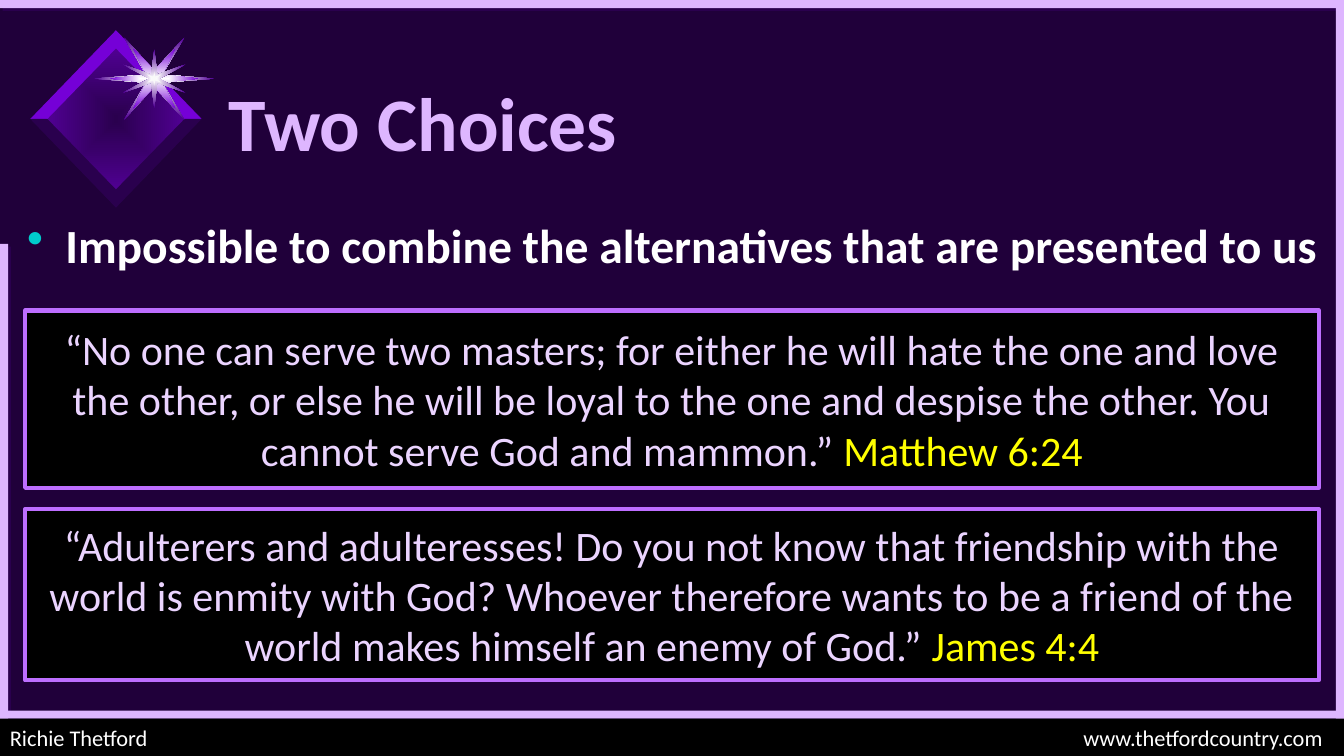
from pptx import Presentation
from pptx.dml.color import RGBColor
from pptx.enum.shapes import MSO_SHAPE
from pptx.enum.text import MSO_ANCHOR, PP_ALIGN
from pptx.oxml import parse_xml
from pptx.oxml.ns import nsdecls, qn
from pptx.util import Inches, Pt

RECT = MSO_SHAPE.RECTANGLE
MIDDLE = MSO_ANCHOR.MIDDLE
LEFT, CENTER = PP_ALIGN.LEFT, PP_ALIGN.CENTER

NIGHT, DARK, DEEP, VIVID = "20003A", "2A004E", "500093", "7500D7"
LILAC, PALE, EDGE = "DEB6FF", "EBD4FF", "BD6EFF"
WHITE, BLACK, YELLOW, TEAL = "FFFFFF", "000000", "FFFF00", "00CCCC"

VERSES = [
    (3.08, 1.76, "“No one can serve two masters; for either he will hate the one and love "
     "the other, or else he will be loyal to the one and despise the other. You "
     "cannot serve God and mammon.” ", "Matthew 6:24"),
    (5.05, 1.7, "“Adulterers and adulteresses! Do you not know that friendship with the "
     "world is enmity with God? Whoever therefore wants to be a friend of the "
     "world makes himself an enemy of God.” ", "James 4:4"),
]
STARS = [
    ([(60, 0), (8, -4), (30, -41), (0, -8)], (WHITE, DEEP)),
    ([(44, 0), (8, -4), (21, -30), (0, -8)], (WHITE, VIVID)),
    ([(5, 0), (31, -14), (3, -4), (0, -29)], (WHITE, DEEP)),
    ([(2, 0), (7, -4), (1, -2), (0, -7)], ("F9F9F9",)),
]
BARS = [(0, 2.42, 0.08, 5.08), (0, 0, 13.33, 0.08),
        (0.08, 7.05, 13.17, 0.08), (13.25, 0, 0.08, 7.5)]


def rgb(code):
    """Turn a hex string into a colour."""
    return RGBColor.from_string(code)


def style(para, size, color, bold=False, align=LEFT):
    """Set the font and alignment of a paragraph."""
    para.alignment = align
    font = para.font
    font.name, font.size, font.bold = "Calibri", Pt(size), bold
    font.color.rgb = rgb(color)


def paint(shape, colors):
    """Fill a shape with one colour, or from its centre outwards with two."""
    shape.shadow.inherit = False
    shape.line.fill.background()
    if len(colors) == 1:
        shape.fill.solid()
        shape.fill.fore_color.rgb = rgb(colors[0])
        return
    shape.fill.gradient()
    for stop, color in zip(shape.fill.gradient_stops, colors):
        stop.color.rgb = rgb(color)
    grad = shape._element.spPr.find(qn("a:gradFill"))
    grad.replace(grad.find(qn("a:lin")), parse_xml(
        f'<a:path {nsdecls("a")} path="rect">'
        '<a:fillToRect l="50000" t="50000" r="50000" b="50000"/></a:path>'))


def block(slide, box, color):
    """Add a plain filled rectangle."""
    shape = slide.shapes.add_shape(RECT, *map(Inches, box))
    paint(shape, (color,))
    return shape


def outline(slide, center, points, colors):
    """Draw a closed outline, in hundredths of an inch around a centre."""
    pen = slide.shapes.build_freeform(*points[0], scale=Inches(0.01))
    pen.add_line_segments(points[1:], close=True)
    paint(pen.convert_to_shape(*map(Inches, center)), colors)


def gem(slide, left, top):
    """Draw the bevelled diamond and its sparkle."""
    mid = (left + 0.85, top + 0.88)
    outline(slide, mid, [(0, -71), (-69, 0), (0, 71), (69, 0)], (DARK, DEEP))
    for down, color in ((-1, VIVID), (1, DARK)):
        for side in (1, -1):
            edge = [(0, 70 * down), (0, 88 * down), (85 * side, 0), (68 * side, 0)]
            outline(slide, mid, edge, (color,))
    for part, colors in STARS:
        upper = part + [(-x, y) for x, y in part[-2::-1]]
        lower = [(x, -y) for x, y in upper[-2:0:-1]]
        outline(slide, (left + 1.23, top + 0.48), upper + lower, colors)


def title(slide, box):
    """Place and format the title."""
    shape = slide.shapes.title
    shape.left, shape.top, shape.width, shape.height = map(Inches, box)
    shape.text_frame.text = "Two Choices"
    shape.text_frame.vertical_anchor = MIDDLE
    style(shape.text_frame.paragraphs[0], 54, LILAC, True)


def point(slide, box):
    """Add the bulleted main point."""
    frame = slide.shapes.add_textbox(*map(Inches, box)).text_frame
    frame.word_wrap = True
    para = frame.paragraphs[0]
    para.text = "Impossible to combine the alternatives that are presented to us"
    style(para, 34, WHITE, True)
    props = para._p.get_or_add_pPr()
    props.set("marL", str(Inches(0.38)))
    props.set("indent", str(Inches(-0.38)))
    bullet = (f'<a:buClr {nsdecls("a")}><a:srgbClr val="{TEAL}"/></a:buClr>',
              f'<a:buChar {nsdecls("a")} char="•"/>')
    for spot, xml in enumerate(bullet):
        props.insert(spot, parse_xml(xml))


def verse(slide, box, quote, source):
    """Add a framed quotation with its source."""
    shape = block(slide, box, BLACK)
    shape.line.color.rgb = rgb(EDGE)
    shape.line.width = Pt(3)
    frame = shape.text_frame
    frame.word_wrap = True
    frame.vertical_anchor = MIDDLE
    frame.margin_left = frame.margin_right = Inches(0.18)
    para = frame.paragraphs[0]
    para.add_run().text = quote
    style(para, 30, PALE, align=CENTER)
    run = para.add_run()
    run.text = source
    run.font.color.rgb = rgb(YELLOW)


def bar(slide, box):
    """Add a border bar with a short hard shadow."""
    props = block(slide, box, LILAC)._element.spPr
    props.find(qn("a:effectLst")).append(parse_xml(
        f'<a:outerShdw {nsdecls("a")} dist="{Pt(2.8)}" dir="2700000">'
        f'<a:srgbClr val="{DARK}"/></a:outerShdw>'))


def footer(slide, box):
    """Add the strip with the author and a right-aligned web address."""
    frame = block(slide, box, BLACK).text_frame
    frame.vertical_anchor = MIDDLE
    frame.word_wrap = True
    para = frame.paragraphs[0]
    para.text = "Richie Thetford\twww.thetfordcountry.com"
    style(para, 16, WHITE)
    stop = Inches(box[2] - 0.31)
    para._p.get_or_add_pPr().insert(0, parse_xml(
        f'<a:tabLst {nsdecls("a")}><a:tab pos="{stop}" algn="r"/></a:tabLst>'))


def main():
    """Build the slide and save it."""
    deck = Presentation()
    deck.slide_width, deck.slide_height = Inches(13.33), Inches(7.5)
    slide = deck.slides.add_slide(deck.slide_layouts[5])
    slide.background.fill.solid()
    slide.background.fill.fore_color.rgb = rgb(NIGHT)
    gem(slide, 0.3, 0.3)
    title(slide, (2.17, 0.5, 10.17, 1.4))
    point(slide, (0.17, 2.09, 13.08, 0.74))
    for top, height, quote, source in VERSES:
        verse(slide, (0.25, top, 12.83, height), quote, source)
    for box in BARS:
        bar(slide, box)
    footer(slide, (0, 7.13, 13.33, 0.37))
    deck.save("out.pptx")


if __name__ == "__main__":
    main()
